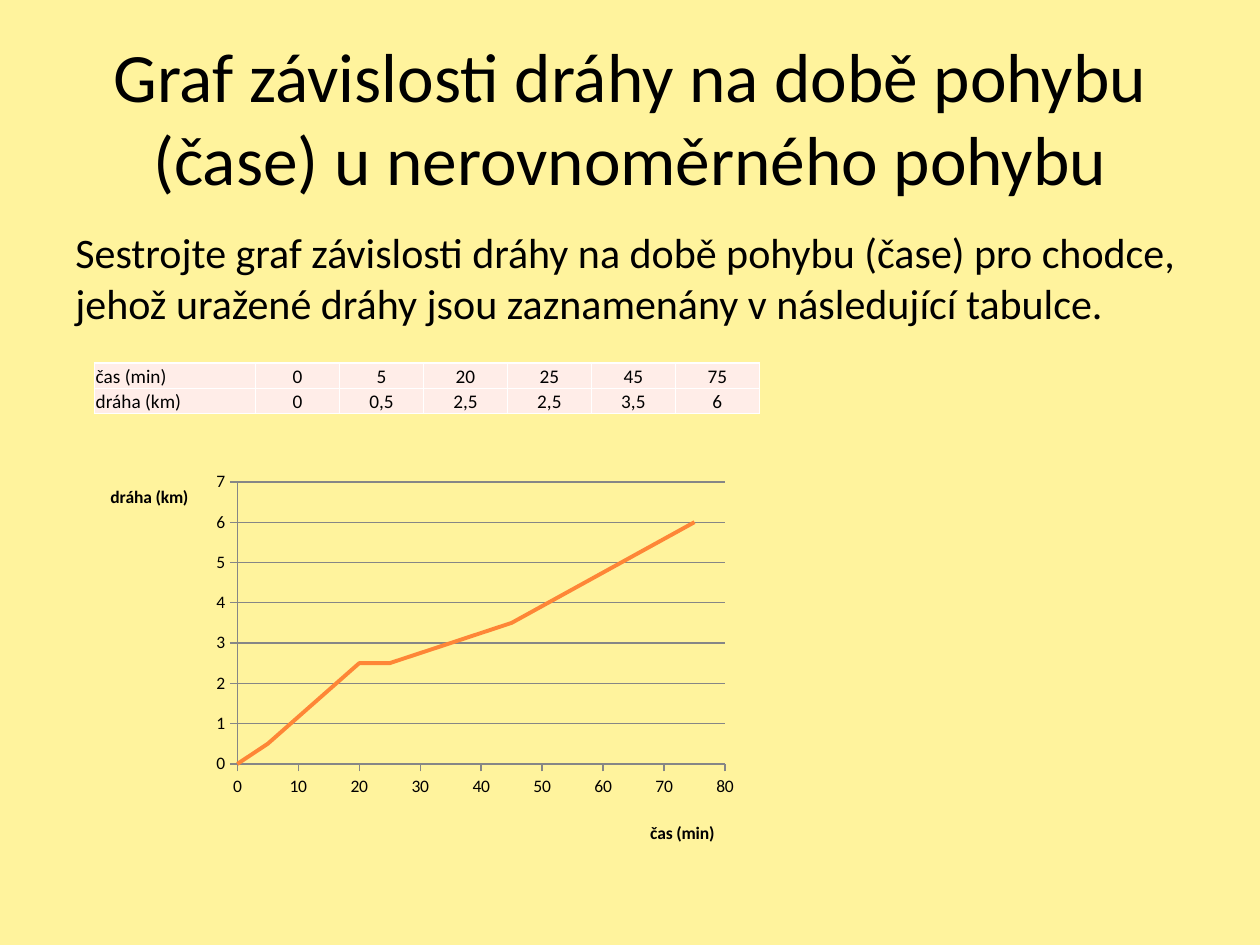
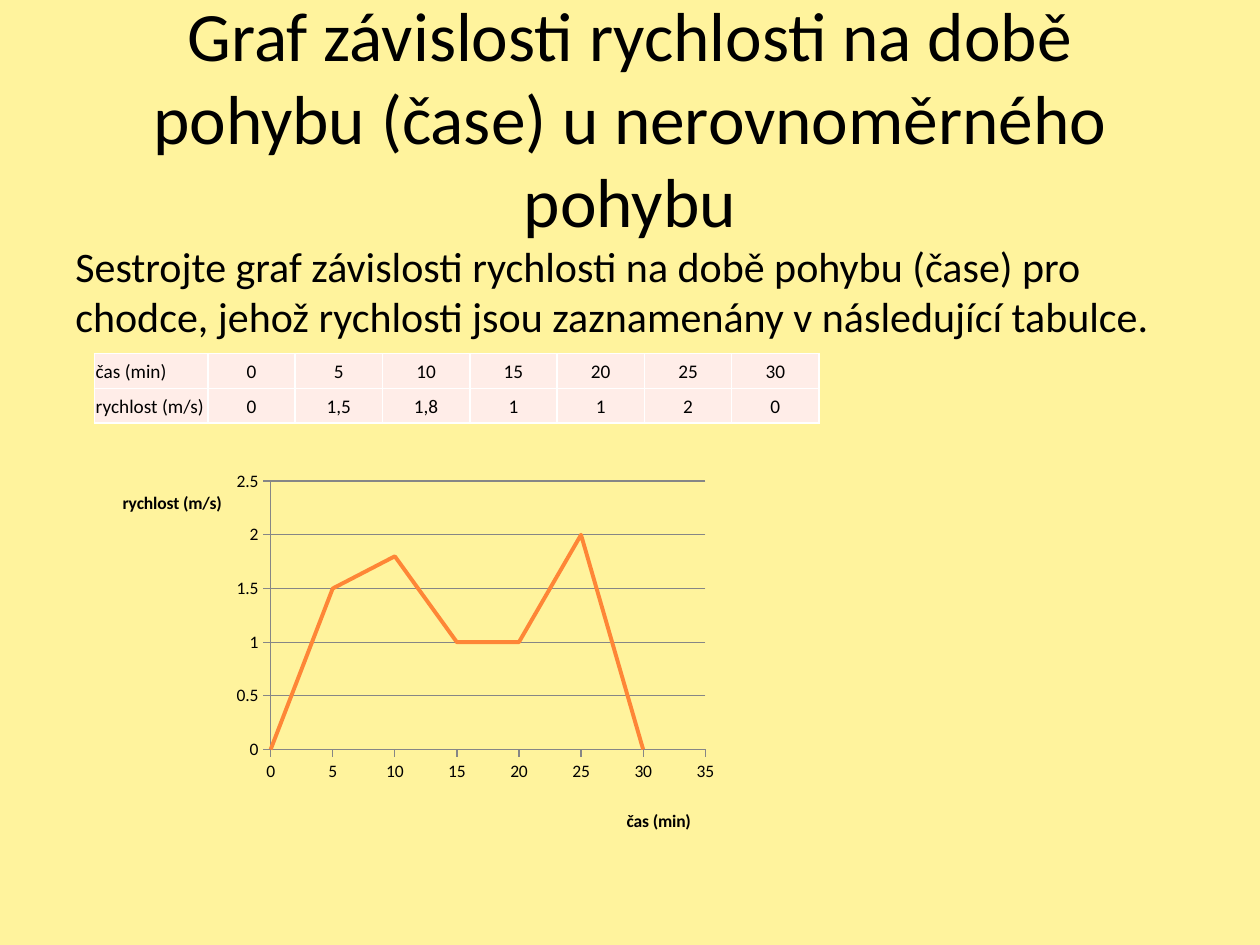
import dataclasses

import lxml.etree
import pptx
import pptx.chart.data
import pptx.dml.color
import pptx.enum.chart
import pptx.enum.text
import pptx.oxml.ns
import pptx.util

Cm = pptx.util.Cm
Pt = pptx.util.Pt
qn = pptx.oxml.ns.qn
RGBColor = pptx.dml.color.RGBColor
Align = pptx.enum.text.PP_ALIGN
Anchor = pptx.enum.text.MSO_ANCHOR

BACKGROUND = RGBColor(0xFF, 0xF3, 0x9D)
INK = RGBColor(0x00, 0x00, 0x00)
CELL = RGBColor(0xFF, 0xED, 0xE8)
BORDER = RGBColor(0xFF, 0xFF, 0xFF)
CURVE = RGBColor(0xFE, 0x86, 0x37)
GRID = RGBColor(0x86, 0x86, 0x86)
FONT = "Calibri"


@dataclasses.dataclass
class Box:
    left: float
    top: float
    width: float
    height: float

    def lengths(self):
        return [Cm(value) for value in dataclasses.astuple(self)]


@dataclasses.dataclass
class Exercise:
    title: str
    task: str
    quantity: str
    times: list
    values: list
    task_box: Box
    table_box: Box
    label_width: float
    chart_box: Box
    plot_area: tuple
    time_title_at: tuple
    value_title_at: tuple
    time_scale: tuple
    value_scale: tuple


TIME = "čas (min)"
TITLE_BOX = Box(1.27, 0.76, 22.86, 3.18)
EXERCISES = [
    Exercise(
        title="Graf závislosti dráhy na době pohybu (čase) u nerovnoměrného pohybu",
        task="Sestrojte graf závislosti dráhy na době pohybu (čase) pro chodce, "
             "jehož uražené dráhy jsou zaznamenány v následující tabulce.",
        quantity="dráha (km)",
        times=[0, 5, 20, 25, 45, 75],
        values=[0, 0.5, 2.5, 2.5, 3.5, 6],
        task_box=Box(1.27, 4.45, 22.86, 12.57),
        table_box=Box(1.9, 7.32, 13.41, 1.02),
        label_width=3.25,
        chart_box=Box(1.9, 9.32, 13.11, 7.9),
        plot_area=(0.22, 0.05, 0.75, 0.72),
        time_title_at=(0.85, 0.91),
        value_title_at=(0.02, 0.05),
        time_scale=(80, 10),
        value_scale=(7, 1),
    ),
    Exercise(
        title="Graf závislosti rychlosti na době pohybu (čase) u nerovnoměrného pohybu",
        task="Sestrojte graf závislosti rychlosti na době pohybu (čase) pro chodce, "
             "jehož rychlosti jsou zaznamenány v následující tabulce.",
        quantity="rychlost (m/s)",
        times=[0, 5, 10, 15, 20, 25, 30],
        values=[0, 1.5, 1.8, 1, 1, 2, 0],
        task_box=Box(1.27, 4.72, 22.86, 12.29),
        table_box=Box(1.9, 7.13, 14.61, 1.4),
        label_width=2.29,
        chart_box=Box(1.9, 9.32, 12.7, 7.62),
        plot_area=(0.28, 0.05, 0.69, 0.71),
        time_title_at=(0.84, 0.91),
        value_title_at=(0.04, 0.07),
        time_scale=(35, 5),
        value_scale=(2.5, 0.5),
    ),
]


def format_font(font, size, bold=False):
    font.name = FONT
    font.size = Pt(size)
    font.bold = bold
    font.color.rgb = INK


def write(frame, text, size, alignment, anchor):
    frame.word_wrap = True
    frame.auto_size = pptx.enum.text.MSO_AUTO_SIZE.NONE
    frame.vertical_anchor = anchor
    frame.text = text
    para = frame.paragraphs[0]
    para.alignment = alignment
    format_font(para.font, size)


def add_title(page, text, box):
    title = page.shapes.title
    title.left, title.top, title.width, title.height = box.lengths()
    write(title.text_frame, text, 39.6, Align.CENTER, Anchor.MIDDLE)


def add_task(page, text, box):
    task = page.shapes.add_textbox(*box.lengths())
    write(task.text_frame, text, 24, Align.LEFT, Anchor.TOP)


def format_cell(cell, text, alignment):
    cell.margin_left = cell.margin_right = cell.margin_top = Cm(0.03)
    cell.margin_bottom = 0
    cell.vertical_anchor = Anchor.MIDDLE
    cell.text = text
    para = cell.text_frame.paragraphs[0]
    para.alignment = alignment
    format_font(para.font, 11)
    properties = cell._tc.get_or_add_tcPr()
    for side in ("a:lnL", "a:lnR", "a:lnT", "a:lnB"):
        line = lxml.etree.SubElement(properties, qn(side), w=str(Pt(1)))
        solid = lxml.etree.SubElement(line, qn("a:solidFill"))
        lxml.etree.SubElement(solid, qn("a:srgbClr"), val=str(BORDER))
    cell.fill.solid()
    cell.fill.fore_color.rgb = CELL


def add_measurements(page, exercise, box):
    rows = [(TIME, exercise.times), (exercise.quantity, exercise.values)]
    count = len(exercise.times)
    table = page.shapes.add_table(len(rows), count + 1, *box.lengths()).table
    table.first_row = table.horz_banding = False
    value_width = (box.width - exercise.label_width) / count
    for index, column in enumerate(table.columns):
        column.width = Cm(value_width if index else exercise.label_width)
    for index, (label, numbers) in enumerate(rows):
        table.rows[index].height = Cm(box.height / len(rows))
        format_cell(table.cell(index, 0), label, Align.LEFT)
        for position, number in enumerate(numbers, 1):
            text = f"{number:g}".replace(".", ",")
            format_cell(table.cell(index, position), text, Align.CENTER)


def place_in_chart(element, index, fractions, inner=False):
    layout = element.find(qn("c:layout"))
    if layout is None:
        layout = lxml.etree.Element(qn("c:layout"))
        element.insert(index, layout)
    manual = lxml.etree.SubElement(layout, qn("c:manualLayout"))
    if inner:
        lxml.etree.SubElement(manual, qn("c:layoutTarget"), val="inner")
    for mode in ("c:xMode", "c:yMode"):
        lxml.etree.SubElement(manual, qn(mode), val="edge")
    for name, fraction in zip(("c:x", "c:y", "c:w", "c:h"), fractions):
        lxml.etree.SubElement(manual, qn(name), val=str(fraction))


def format_line(line, color, width):
    line.color.rgb = color
    line.width = Pt(width)


def format_axis(axis, title, title_at, scale):
    axis.minimum_scale = 0
    axis.maximum_scale, axis.major_unit = scale
    axis.major_tick_mark = pptx.enum.chart.XL_TICK_MARK.OUTSIDE
    axis.minor_tick_mark = pptx.enum.chart.XL_TICK_MARK.NONE
    axis.has_major_gridlines = False
    format_line(axis.format.line, GRID, 0.75)
    format_font(axis.tick_labels.font, 10)
    frame = axis.axis_title.text_frame
    frame.text = title
    format_font(frame.paragraphs[0].font, 10, bold=True)
    frame._txBody.bodyPr.set("rot", "0")
    frame._txBody.bodyPr.set("vert", "horz")
    place_in_chart(axis.axis_title._element, 1, title_at)


def add_graph(page, exercise, box):
    data = pptx.chart.data.XyChartData()
    points = data.add_series("Series 1")
    for time, value in zip(exercise.times, exercise.values):
        points.add_data_point(time, value)
    kind = pptx.enum.chart.XL_CHART_TYPE.XY_SCATTER_LINES_NO_MARKERS
    chart = page.shapes.add_chart(kind, *box.lengths(), data).chart
    chart.has_title = chart.has_legend = False
    format_font(chart.font, 10)
    plot = chart.plots[0]
    plot.vary_by_categories = False
    plot.series[0].smooth = False
    format_line(plot.series[0].format.line, CURVE, 2.25)
    format_axis(chart.category_axis, TIME, exercise.time_title_at, exercise.time_scale)
    format_axis(chart.value_axis, exercise.quantity, exercise.value_title_at,
                exercise.value_scale)
    chart.value_axis.has_major_gridlines = True
    format_line(chart.value_axis.major_gridlines.format.line, GRID, 0.75)
    place_in_chart(chart._chartSpace.chart.plotArea, 0, exercise.plot_area, inner=True)


def add_exercise(deck, exercise):
    page = deck.slides.add_slide(deck.slide_layouts[5])
    add_title(page, exercise.title, TITLE_BOX)
    add_task(page, exercise.task, exercise.task_box)
    add_measurements(page, exercise, exercise.table_box)
    add_graph(page, exercise, exercise.chart_box)


def main():
    deck = pptx.Presentation()
    deck.slide_width, deck.slide_height = Cm(25.4), Cm(19.05)
    fill = deck.slide_master.background.fill
    fill.solid()
    fill.fore_color.rgb = BACKGROUND
    for exercise in EXERCISES:
        add_exercise(deck, exercise)
    deck.save("out.pptx")


if __name__ == "__main__":
    main()
